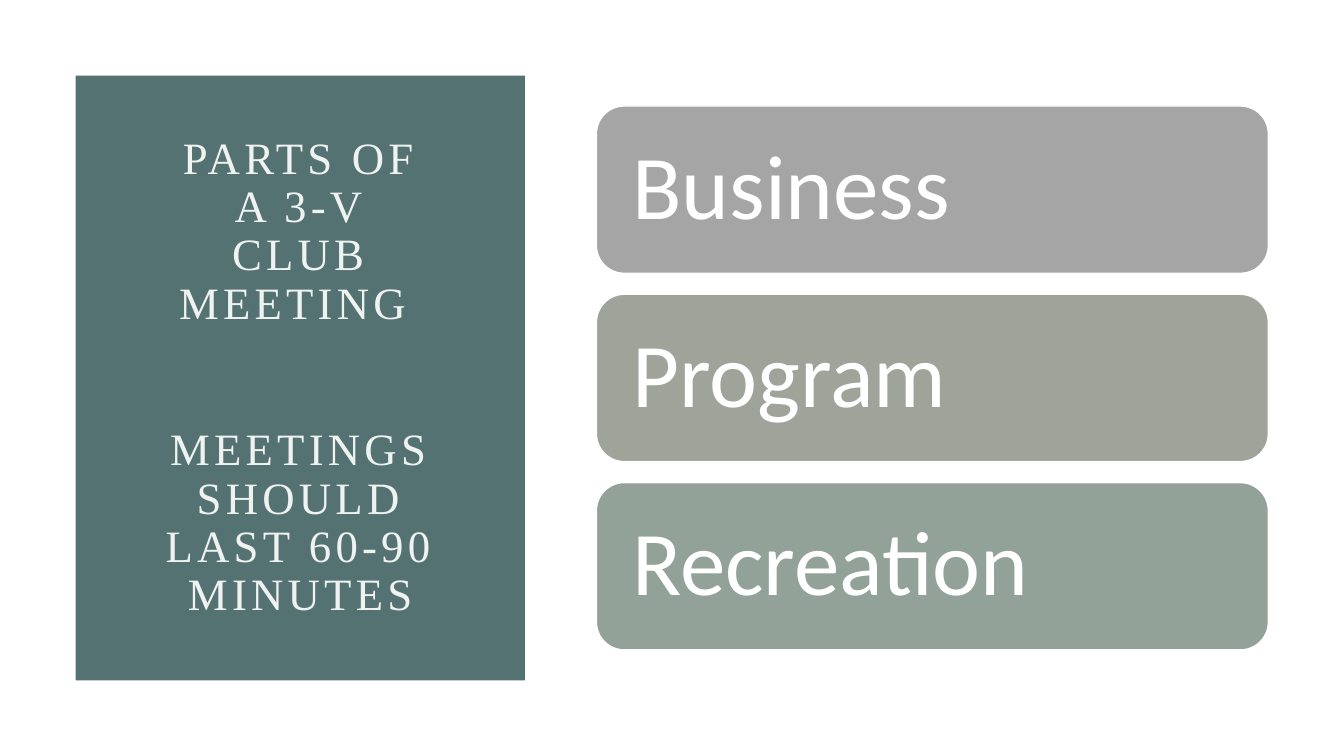
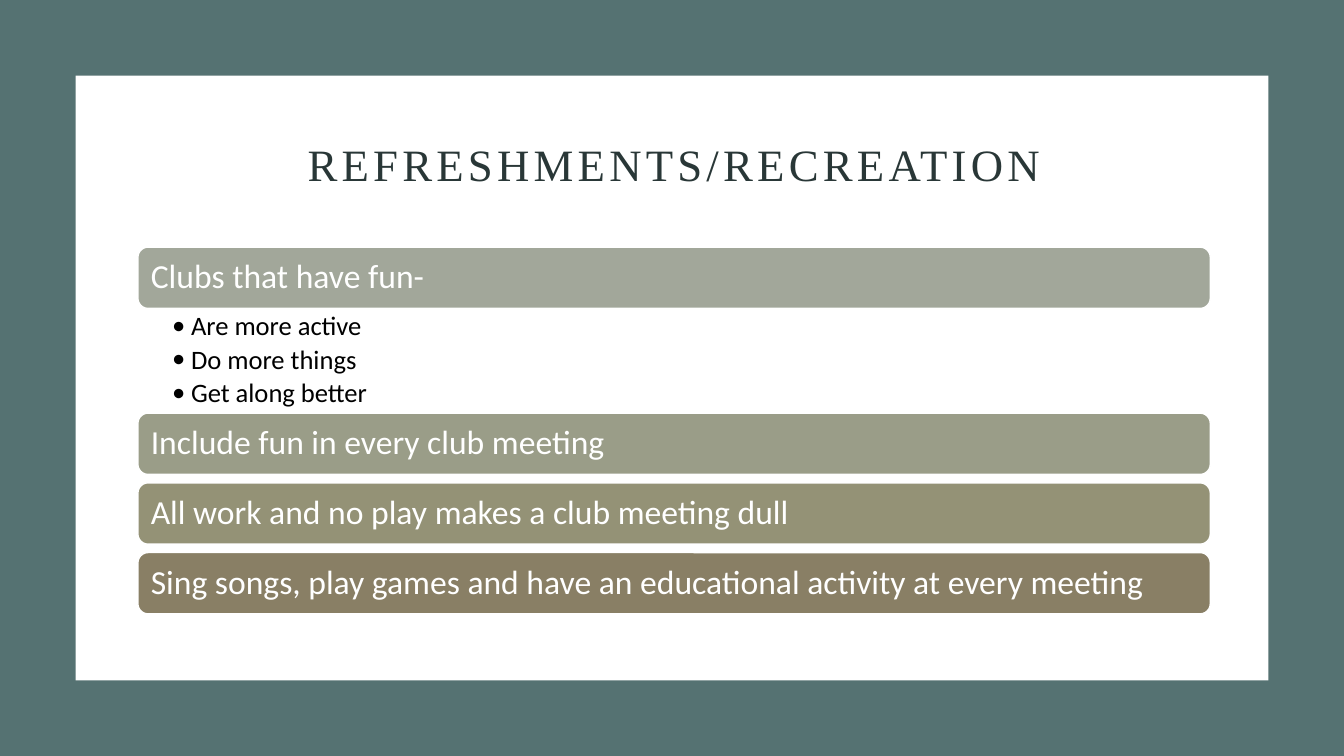
from pptx import Presentation
from pptx.dml.color import RGBColor
from pptx.enum import shapes, text
from pptx.util import Pt

TEAL, WHITE, BLACK, PALE, DARK = "557272", "FFFFFF", "000000", "EEF2F0", "293737"
SERIF, SANS = "Times New Roman", "Calibri"
WIDTH, HEIGHT, MARGIN = 960, 540, 54
DRAWING = "{http://schemas.openxmlformats.org/drawingml/2006/main}"

PARTS_TITLE = ["PARTS OF A 3-V CLUB MEETING ", "MEETINGS SHOULD LAST 60-90 MINUTES"]
PARTS = [("Business", "A5A5A5"), ("Program", "A0A399"), ("Recreation", "92A299")]

FUN_TITLE = ["REFRESHMENTS/RECREATION"]
FUN = [
    ("Clubs that have fun-", "A2A79A",
     ["Are more active", "Do more things", "Get along better"]),
    ("Include fun in every club meeting", "9A9D88", []),
    ("All work and no play makes a club meeting dull", "949276", []),
    ("Sing songs, play games and have an educational activity at every meeting",
     "897F65", []),
]


def rgb(value):
    return RGBColor.from_string(value)


def add_box(slide, kind, x, y, w, h, fill, line=None):
    sp = slide.shapes.add_shape(kind, Pt(x), Pt(y), Pt(w), Pt(h))
    sp.shadow.inherit = False
    sp.fill.solid()
    sp.fill.fore_color.rgb = rgb(fill)
    if line:
        sp.line.color.rgb = rgb(line)
        sp.line.width = Pt(1)
    else:
        sp.line.fill.background()
    return sp


def add_panel(slide, x, y, w, h, fill):
    return add_box(slide, shapes.MSO_SHAPE.RECTANGLE, x, y, w, h, fill)


def write(sp, lines, font, size, color, inset=(7.2, 3.6), align=text.PP_ALIGN.LEFT,
          anchor=text.MSO_ANCHOR.MIDDLE, before=0, after=0):
    tf = sp.text_frame
    tf.word_wrap = True
    tf.vertical_anchor = anchor
    tf.margin_left = tf.margin_right = Pt(inset[0])
    tf.margin_top = tf.margin_bottom = Pt(inset[1])
    for i, line in enumerate(lines):
        p = tf.add_paragraph() if i else tf.paragraphs[0]
        p.alignment = align
        p.line_spacing = 0.9
        p.space_before = Pt(before if i else 0)
        p.space_after = Pt(after)
        r = p.add_run()
        r.text = line
        r.font.name = font
        r.font.size = Pt(size)
        r.font.color.rgb = rgb(color)
    return tf


def add_text_box(slide, x, y, w, h):
    return slide.shapes.add_textbox(Pt(x), Pt(y), Pt(w), Pt(h))


def add_title(slide, x, y, w, h, lines, color):
    tf = write(add_text_box(slide, x, y, w, h), lines, SERIF, 32, color,
               align=text.PP_ALIGN.CENTER, before=70)
    for p in tf.paragraphs:
        for r in p.runs:
            r.font._element.set("spc", "300")


def add_bar(slide, x, y, w, h, label, fill, size, inset):
    sp = add_box(slide, shapes.MSO_SHAPE.ROUNDED_RECTANGLE, x, y, w, h, fill, WHITE)
    write(sp, [label], SANS, size, WHITE, inset=(inset, 0))


def add_bullets(slide, x, y, w, h, lines):
    tf = write(add_text_box(slide, x, y, w, h), lines, SANS, 19, BLACK,
               inset=(24.5, 3), anchor=text.MSO_ANCHOR.TOP, after=3.5)
    for p in tf.paragraphs:
        pPr = p._p.get_or_add_pPr()
        pPr.set("marL", str(Pt(13.5)))
        pPr.set("indent", str(-Pt(13.5)))
        for tag, attrs in (("buFont", {"typeface": SANS}), ("buChar", {"char": "•"})):
            pPr.append(pPr.makeelement(DRAWING + tag, attrs))


def build_parts(slide):
    add_panel(slide, MARGIN, MARGIN, 321, HEIGHT - 2 * MARGIN, TEAL)
    add_title(slide, 108, 108, 213, 324, PARTS_TITLE, PALE)
    bar_h, gap = 119.5, 15
    top = (HEIGHT - len(PARTS) * bar_h - (len(PARTS) - 1) * gap) / 2
    for i, (label, fill) in enumerate(PARTS):
        add_bar(slide, 426, top + i * (bar_h + gap), 480, bar_h, label, fill, 65, 19.8)


def build_fun(slide):
    add_panel(slide, 0, 0, WIDTH, HEIGHT, TEAL)
    add_panel(slide, MARGIN, MARGIN, WIDTH - 2 * MARGIN, HEIGHT - 2 * MARGIN, WHITE)
    add_title(slide, 108, 84, 747, 70.5, FUN_TITLE, DARK)
    x, y, w, bar_h, gap, bullets_h = 98.5, 176.5, 766, 43.8, 6, 74.8
    for label, fill, bullets in FUN:
        add_bar(slide, x, y, w, bar_h, label, fill, 24, 7.2)
        y += bar_h
        if bullets:
            add_bullets(slide, x, y, w, bullets_h, bullets)
        y += bullets_h if bullets else gap


def main():
    prs = Presentation()
    prs.slide_width, prs.slide_height = Pt(WIDTH), Pt(HEIGHT)
    for build in (build_parts, build_fun):
        build(prs.slides.add_slide(prs.slide_layouts[6]))
    prs.save("out.pptx")


if __name__ == "__main__":
    main()
